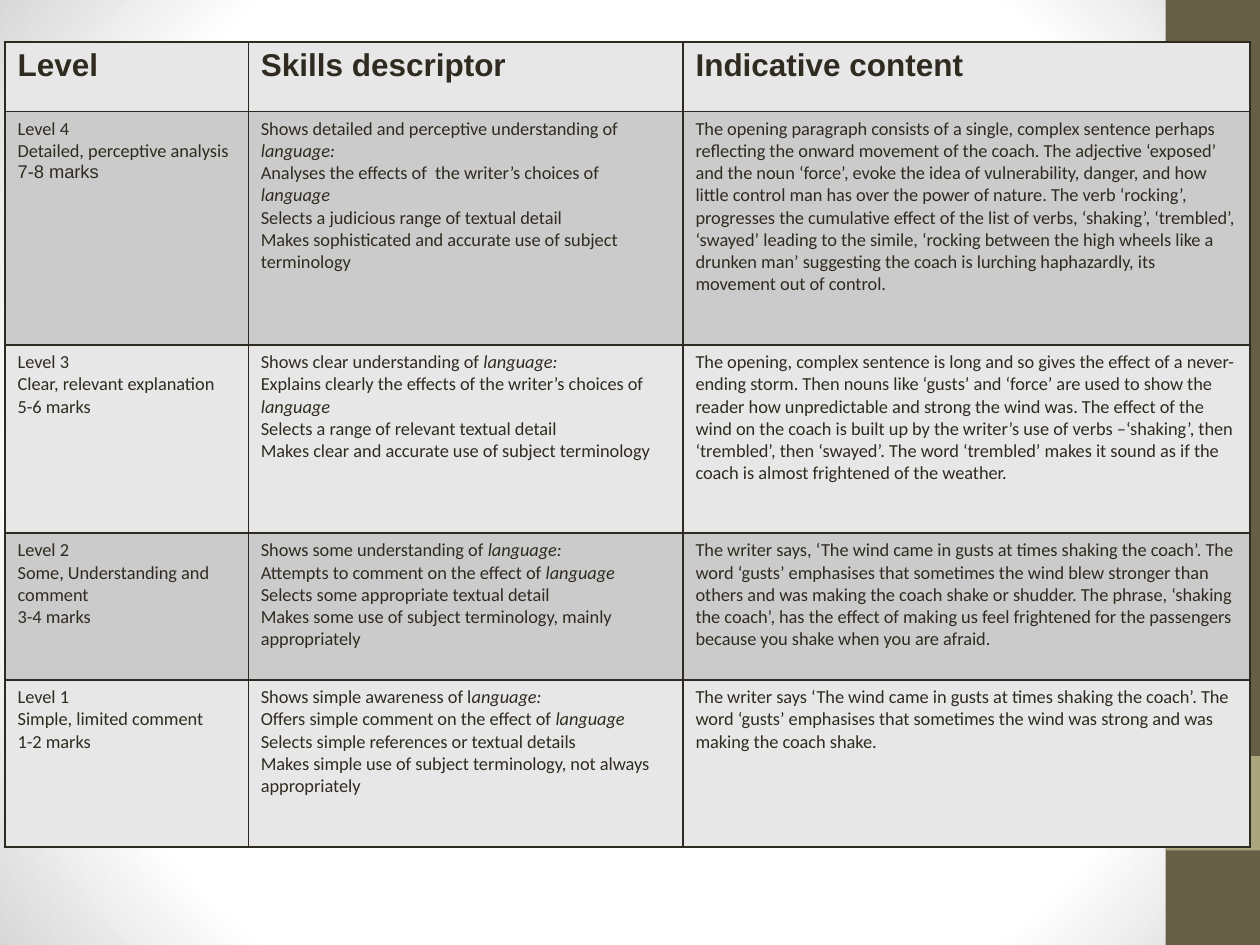
"""Build a mark-scheme slide: one table of levels, skills and sample answers."""
from lxml import etree
from pptx import Presentation, util as u
from pptx.dml.color import RGBColor
from pptx.enum import shapes
from pptx.oxml import parse_xml
from pptx.oxml.ns import nsdecls, qn

HEADINGS = ["Level", "Skills descriptor", "Indicative content"]
LEVELS = [
    (["Level 4", "Detailed, perceptive analysis", "7-8 marks"],
     ["Shows detailed and perceptive understanding of *language:*",
      "Analyses the effects of  the writer’s choices of *language*",
      "Selects a judicious range of textual detail",
      "Makes sophisticated and accurate use of subject terminology"],
     ["The opening paragraph consists of a single, complex sentence perhaps reflecting the onward "
      "movement of the coach. The adjective ‘exposed’ and the noun ‘force’, evoke the idea of "
      "vulnerability, danger, and how little control man has over the power of nature. The verb "
      "‘rocking’, progresses the cumulative effect of the list of verbs, ‘shaking’, ‘trembled’, "
      "‘swayed’ leading to the simile, ‘rocking between the high wheels like a drunken man’ "
      "suggesting the coach is lurching haphazardly, its movement out of control."]),
    (["Level 3", "Clear, relevant explanation", "5-6 marks"],
     ["Shows clear understanding of *language:*",
      "Explains clearly the effects of the writer’s choices of *language*",
      "Selects a range of relevant textual detail",
      "Makes clear and accurate use of subject terminology"],
     ["The opening, complex sentence is long and so gives the effect of a never-ending storm. Then "
      "nouns like ‘gusts’ and ‘force’ are used to show the reader how unpredictable and strong the "
      "wind was. The effect of the wind on the coach is built up by the writer’s use of verbs "
      "–‘shaking’, then ‘trembled’, then ‘swayed’. The word ‘trembled’ makes it sound as if the "
      "coach is almost frightened of the weather."]),
    (["Level 2", "Some, Understanding and comment", "3-4 marks"],
     ["Shows some understanding of *language:*",
      "Attempts to comment on the effect of *language*",
      "Selects some appropriate textual detail",
      "Makes some use of subject terminology, mainly appropriately"],
     ["The writer says, ‘The wind came in gusts at times shaking the coach’. The word ‘gusts’ "
      "emphasises that sometimes the wind blew stronger than others and was making the coach shake "
      "or shudder. The phrase, ‘shaking the coach’, has the effect of making us feel frightened for "
      "the passengers because you shake when you are afraid."]),
    (["Level 1", "Simple, limited comment", "1-2 marks"],
     ["Shows simple awareness of l*anguage:*",
      "Offers simple comment on the effect of *language*",
      "Selects simple references or textual details",
      "Makes simple use of subject terminology, not always appropriately"],
     ["The writer says ‘The wind came in gusts at times shaking the coach’. The word ‘gusts’ "
      "emphasises that sometimes the wind was strong and was making the coach shake."]),
]
ARIAL_LINES = {"7-8 marks"}

THEME = {
    "ink": "2F2B20", "bands": ["E7E7E7", "CCCBCB"],
    "sidebar": "675E47", "accent": "A9A57C",
    "glow": [(0, "FFFFFF"), (75, "FFFFFF"), (100, "D8D8D8")],
    "heading": ("Arial", 18), "body": ("Calibri", 10.5), "border": 1,
}
SLIDE = (720, 540)
SIDEBAR = (666, 0, 54, 540)
ACCENT = (666, 432, 54, 54)
TABLE_AT = (2.9, 24)
COLUMNS = [139, 248.4, 324]
ROWS = [39.6, 133.5, 107.5, 84, 95.4]


def add_glow(slide):
    stops = "".join(f'<a:gs pos="{at * 1000}"><a:srgbClr val="{color}"/></a:gs>'
                    for at, color in THEME["glow"])
    backdrop = parse_xml(
        f'<p:bg {nsdecls("p", "a")}><p:bgPr><a:gradFill rotWithShape="1"><a:gsLst>{stops}</a:gsLst>'
        '<a:path path="circle"><a:fillToRect l="50000" t="50000" r="50000" b="50000"/></a:path>'
        '</a:gradFill><a:effectLst/></p:bgPr></p:bg>')
    slide.element.cSld.insert(0, backdrop)


def add_block(slide, box, color):
    block = slide.shapes.add_shape(shapes.MSO_SHAPE.RECTANGLE, *map(u.Pt, box))
    block.shadow.inherit = False
    block.fill.solid()
    block.fill.fore_color.rgb = RGBColor.from_string(color)
    block.line.fill.background()


def style_cell(cell, color):
    properties = cell._tc.get_or_add_tcPr()
    for side in ("lnL", "lnR", "lnT", "lnB"):
        border = etree.SubElement(properties, qn(f"a:{side}"), w=str(u.Pt(THEME["border"])))
        paint = etree.SubElement(border, qn("a:solidFill"))
        etree.SubElement(paint, qn("a:srgbClr"), val=THEME["ink"])
    cell.fill.solid()
    cell.fill.fore_color.rgb = RGBColor.from_string(color)


def write_cell(cell, lines, heading):
    cell.text_frame.text = "\n".join(line.replace("*", "") for line in lines)
    face, size = THEME["heading" if heading else "body"]
    for paragraph, line in zip(cell.text_frame.paragraphs, lines):
        pieces = line.split("*")
        paragraph.runs[0].text = pieces[0]
        for piece in filter(None, pieces[1:]):
            emphasis = paragraph.add_run()
            emphasis.text = piece
            emphasis.font.italic = True
        for run in paragraph.runs:
            run.font.name = "Arial" if line in ARIAL_LINES else face
            run.font.size = u.Pt(size)
            run.font.bold = heading
            run.font.color.rgb = RGBColor.from_string(THEME["ink"])


def add_mark_scheme(slide):
    extent = (sum(COLUMNS), sum(ROWS))
    scheme = slide.shapes.add_table(len(ROWS), len(COLUMNS), *map(u.Pt, TABLE_AT + extent)).table
    scheme.first_row = scheme.horz_banding = False
    for column, width in zip(scheme.columns, COLUMNS):
        column.width = u.Pt(width)
    content = [[[heading] for heading in HEADINGS], *LEVELS]
    for index, (row, height, entries) in enumerate(zip(scheme.rows, ROWS, content)):
        row.height = u.Pt(height)
        for cell, lines in zip(row.cells, entries):
            style_cell(cell, THEME["bands"][index % 2])
            write_cell(cell, lines, heading=index == 0)


def main():
    deck = Presentation()
    deck.slide_width, deck.slide_height = map(u.Pt, SLIDE)
    slide = deck.slides.add_slide(deck.slide_layouts[6])
    add_glow(slide)
    add_block(slide, SIDEBAR, THEME["sidebar"])
    add_block(slide, ACCENT, THEME["accent"])
    add_mark_scheme(slide)
    deck.save("out.pptx")


if __name__ == "__main__":
    main()
